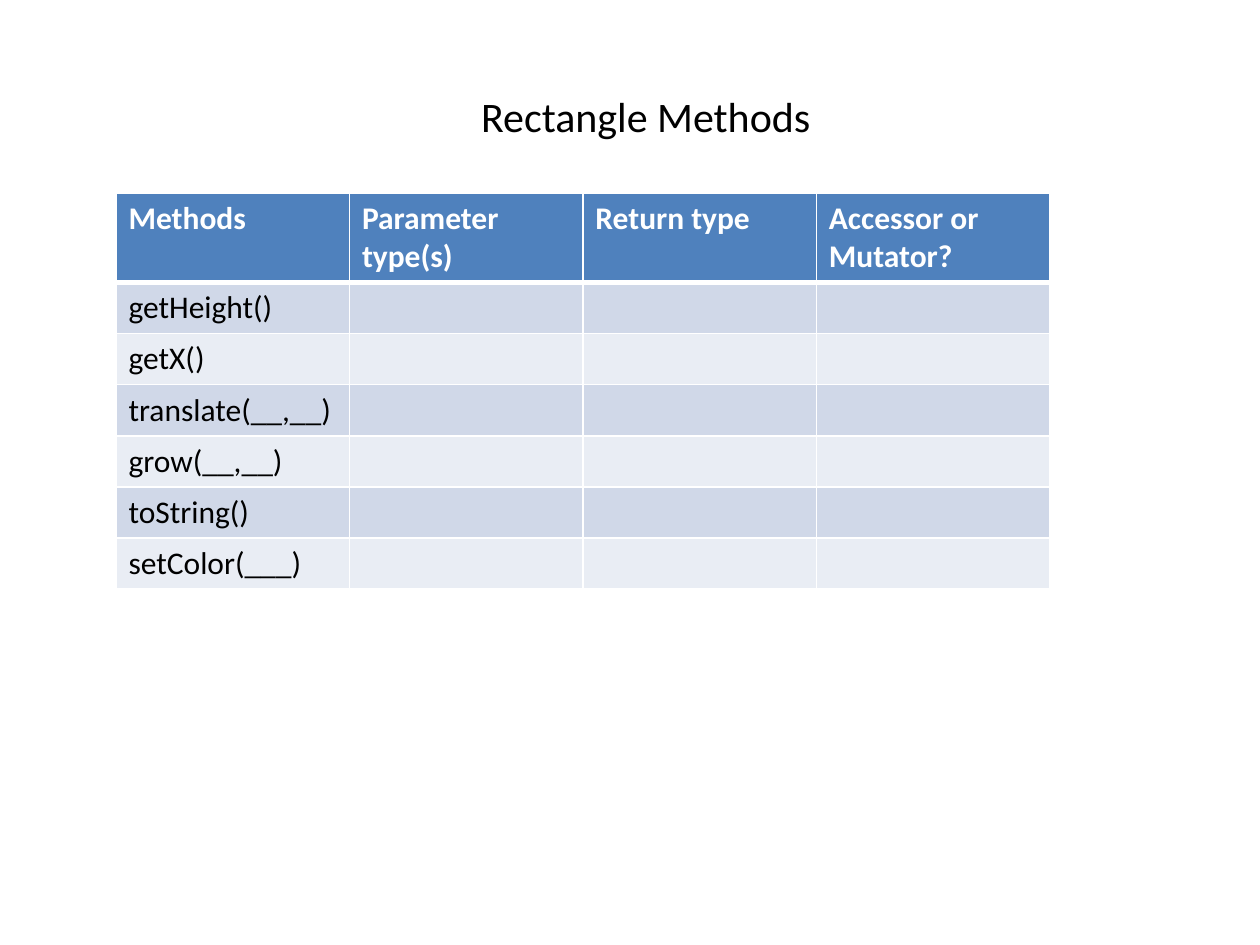
from lxml.etree import SubElement
from pptx import Presentation
from pptx.dml.color import RGBColor
from pptx.enum.text import MSO_ANCHOR, PP_ALIGN
from pptx.oxml.ns import qn
from pptx.util import Emu, Pt

PX = 914400 // 126
FONT = "Calibri"
COLORS = {
    "header": "4F81BD",
    "odd": "D0D8E8",
    "even": "E9EDF4",
    "white": "FFFFFF",
    "black": "000000",
}
HEADERS = ["Methods", "Parameter type(s)", "Return type", "Accessor or Mutator?"]
METHODS = ["getHeight()", "getX()", "translate(__,__)", "grow(__,__)",
           "toString()", "setColor(___)"]
HEADER_H, ROW_H = 88, 51


def px(n):
    return Emu(n * PX)


def rgb(name):
    return RGBColor.from_string(COLORS[name])


def style_font(p, size, color, bold=False):
    p.font.name = FONT
    p.font.size = Pt(size)
    p.font.bold = bold
    p.font.color.rgb = rgb(color)


def add_title(slide, text, x, y, w, h):
    s = slide.shapes.title
    s.left, s.top, s.width, s.height = px(x), px(y), px(w), px(h)
    tf = s.text_frame
    tf.text = text
    tf.word_wrap = True
    tf.vertical_anchor = MSO_ANCHOR.TOP
    p = tf.paragraphs[0]
    p.alignment = PP_ALIGN.CENTER
    style_font(p, 24, "black")


def set_borders(cell, top, bottom):
    """Draw white cell borders; top and bottom are widths in points."""
    tc_pr = cell._tc.get_or_add_tcPr()
    for side, width in (("L", 1), ("R", 1), ("T", top), ("B", bottom)):
        ln = SubElement(tc_pr, qn(f"a:ln{side}"), w=str(Pt(width)))
        fill = SubElement(ln, qn("a:solidFill"))
        SubElement(fill, qn("a:srgbClr"), val=COLORS["white"])


def add_methods_table(slide, x, y, w):
    rows = [HEADERS] + [[name, "", "", ""] for name in METHODS]
    h = HEADER_H + ROW_H * len(METHODS)
    table = slide.shapes.add_table(len(rows), len(HEADERS),
                                   px(x), px(y), px(w), px(h)).table
    for i, texts in enumerate(rows):
        is_header = i == 0
        table.rows[i].height = px(HEADER_H if is_header else ROW_H)
        fill = "header" if is_header else "odd" if i % 2 else "even"
        for j, text in enumerate(texts):
            cell = table.cell(i, j)
            cell.text = text
            style_font(cell.text_frame.paragraphs[0], 18,
                       "white" if is_header else "black", is_header)
            set_borders(cell, 3 if i == 1 else 1, 3 if is_header else 1)
            cell.fill.solid()
            cell.fill.fore_color.rgb = rgb(fill)


def main():
    prs = Presentation()
    prs.slide_width, prs.slide_height = px(1260), px(945)
    slide = prs.slides.add_slide(prs.slide_layouts[5])
    add_methods_table(slide, 116, 193, 934)
    add_title(slide, "Rectangle Methods", 179, 84, 934, 63)
    prs.save("out.pptx")


if __name__ == "__main__":
    main()
